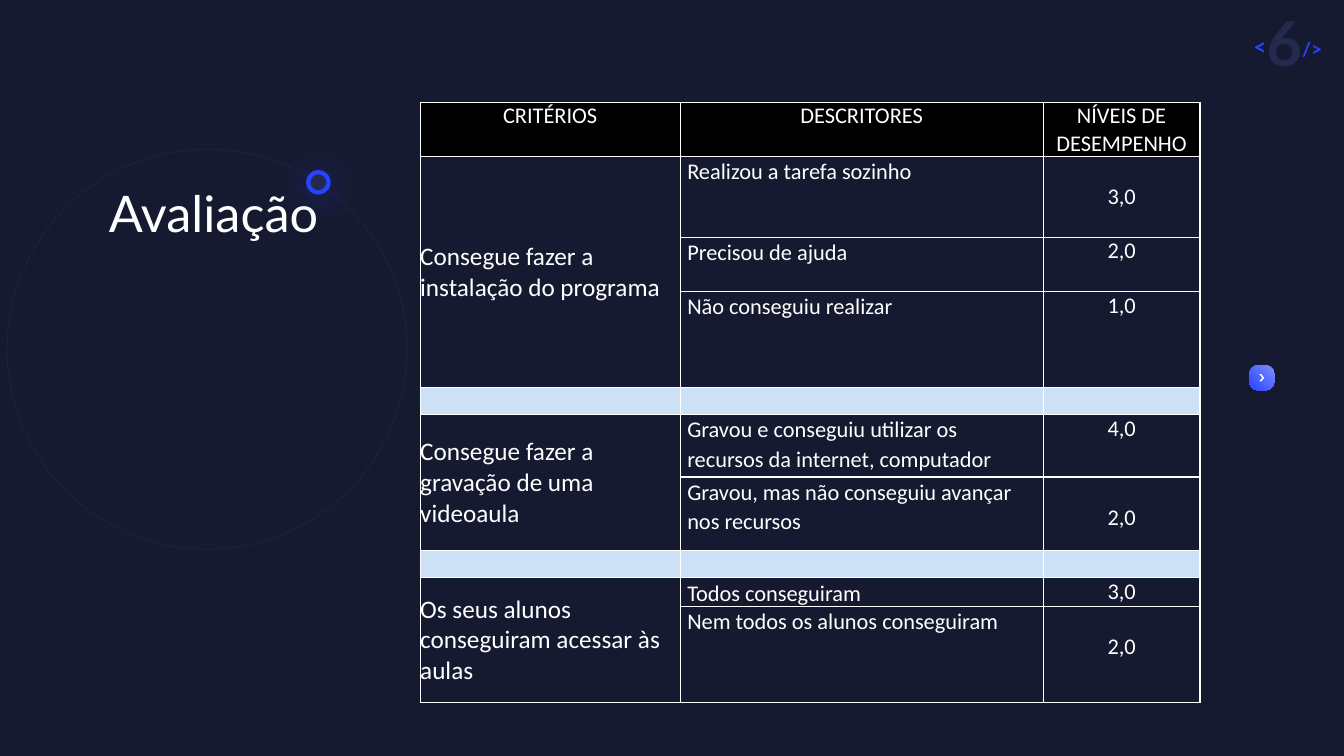
from lxml import etree
from pptx import Presentation
from pptx.dml.color import RGBColor
from pptx.enum.shapes import MSO_SHAPE as SHAPE
from pptx.enum.text import MSO_ANCHOR as ANCHOR, PP_ALIGN as ALIGN
from pptx.oxml.ns import qn
from pptx.util import Cm, Pt

NAVY = RGBColor(0x16, 0x1A, 0x30)
INDIGO = RGBColor(0x23, 0x2A, 0x4E)
BLUE = RGBColor(0x28, 0x43, 0xFF)
LILAC = RGBColor(0x7E, 0x8E, 0xFF)
PALE = RGBColor(0xCC, 0xE1, 0xF6)
WHITE = RGBColor(0xFF, 0xFF, 0xFF)
BLACK = RGBColor(0, 0, 0)

TITLE = "Avaliação"
PAGE_TAG = [("<", 28, BLUE, 30), ("6", 44, INDIGO, 0), ("/>", 24, BLUE, 30)]
HEADERS = ["CRITÉRIOS", "DESCRITORES", "NÍVEIS DE DESEMPENHO"]
# Criterion, then (descriptor, level, lines the level is lowered by)
CRITERIA = [
    ("Consegue fazer a instalação do programa", [
        ("Realizou a tarefa sozinho", "3,0", 1),
        ("Precisou de ajuda", "2,0", 0),
        ("Não conseguiu realizar", "1,0", 0)]),
    ("Consegue fazer a gravação de uma videoaula", [
        ("Gravou e conseguiu utilizar os recursos da internet, computador", "4,0", 0),
        ("Gravou, mas não conseguiu avançar nos recursos", "2,0", 1)]),
    ("Os seus alunos conseguiram acessar às aulas", [
        ("Todos conseguiram", "3,0", 0),
        ("Nem todos os alunos conseguiram", "2,0", 1)]),
]
COL_WIDTHS = [6.55, 9.15, 3.95]
ROW_HEIGHTS = [1.36, 2.04, 1.37, 2.42, 0.68, 1.57, 1.86, 0.68, 0.72, 2.42]
LINE = 0.68


def add_color(parent, color, opacity=100):
    clr = etree.SubElement(parent, qn("a:srgbClr"), val=str(color))
    etree.SubElement(clr, qn("a:alpha"), val=str(opacity * 1000))


def add_plain_shape(kind, x, y, w, h):
    """Add a shape without shadow, fill or line."""
    s = slide.shapes.add_shape(kind, Cm(x), Cm(y), Cm(w), Cm(h))
    s.shadow.inherit = False
    s.fill.background()
    s.line.fill.background()
    return s


def add_shadow(s, color, opacity, blur, dist, angle):
    effects = s._element.spPr.find(qn("a:effectLst"))
    shadow = etree.SubElement(
        effects, qn("a:outerShdw"), blurRad=str(Pt(blur)), dist=str(Pt(dist)),
        dir=str(angle * 60000), algn="ctr", rotWithShape="0")
    add_color(shadow, color, opacity)


def style_cell(cell, fill=None):
    """Clear the margins, set the fill and draw a white border all round."""
    cell.margin_left = cell.margin_right = cell.margin_top = cell.margin_bottom = 0
    if fill is None:
        cell.fill.background()
    else:
        cell.fill.solid()
        cell.fill.fore_color.rgb = fill
    tc_pr = cell._tc.get_or_add_tcPr()
    for i, side in enumerate("LRTB"):
        ln = etree.Element(qn(f"a:ln{side}"), w=str(Pt(1)))
        add_color(etree.SubElement(ln, qn("a:solidFill")), WHITE)
        tc_pr.insert(i, ln)


def write(cell, text, size=16, align=ALIGN.LEFT):
    p = cell.text_frame.paragraphs[0]
    p.text = text
    p.alignment = align
    p.font.name, p.font.size, p.font.color.rgb = "Calibri", Pt(size), WHITE
    return p


prs = Presentation()
prs.slide_width, prs.slide_height = Cm(33.87), Cm(19.05)
slide = prs.slides.add_slide(prs.slide_layouts[5])
slide.background.fill.solid()
slide.background.fill.fore_color.rgb = NAVY

# Page tag
tf = slide.shapes.add_textbox(Cm(27.1), 0, Cm(6.48), Cm(2.13)).text_frame
tf.word_wrap = True
tf.vertical_anchor = ANCHOR.MIDDLE
p = tf.paragraphs[0]
p.alignment = ALIGN.RIGHT
p.font.name, p.font.bold = "Lato", True
for text, size, color, raised in PAGE_TAG:
    r = p.add_run()
    r.text = text
    r.font.name, r.font.bold = "Lato", True
    r.font.size, r.font.color.rgb = Pt(size), color
    r.font._element.set("baseline", str(raised * 1000))

# Orbit and its dot
orbit = add_plain_shape(SHAPE.OVAL, 0.18, 3.76, 10.08, 10.08)
orbit.line.color.rgb, orbit.line.width = INDIGO, Pt(0.5)
orbit_color = orbit.line._ln.find(qn("a:solidFill"))[0]
etree.SubElement(orbit_color, qn("a:alpha"), val="60000")
dot = add_plain_shape(SHAPE.OVAL, 7.77, 4.34, 0.51, 0.51)
dot.fill.solid()
dot.fill.fore_color.rgb = INDIGO
dot.line.color.rgb, dot.line.width = BLUE, Pt(3)
add_shadow(dot, BLUE, 40, 24, 3, 90)

# Title
title = slide.shapes.title
title.left, title.top, title.width, title.height = Cm(2.49), Cm(4.45), Cm(9), Cm(1.8)
title.text_frame.text = TITLE
title.text_frame.vertical_anchor = ANCHOR.TOP
p = title.text_frame.paragraphs[0]
p.alignment = ALIGN.LEFT
p.font.name, p.font.size, p.font.color.rgb = "Lato", Pt(36), WHITE

# Next button
button = add_plain_shape(SHAPE.ROUNDED_RECTANGLE, 31.48, 9.2, 0.64, 0.64)
button.adjustments[0] = 0.36
button.fill.gradient()
button.fill.gradient_angle = 225
for stop, color in zip(button.fill.gradient_stops, (LILAC, BLUE)):
    stop.color.rgb = color
add_shadow(button, BLACK, 6, 33, 24, 53)
chevron = add_plain_shape(SHAPE.CHEVRON, 31.74, 9.43, 0.12, 0.18)
chevron.adjustments[0] = 0.6
chevron.fill.solid()
chevron.fill.fore_color.rgb = WHITE

# Assessment table
frame = slide.shapes.add_table(
    len(ROW_HEIGHTS), len(COL_WIDTHS), Cm(10.59), Cm(2.58),
    Cm(sum(COL_WIDTHS)), Cm(sum(ROW_HEIGHTS)))
table = frame.table
table.first_row = table.horz_banding = False
for col, width in zip(table.columns, COL_WIDTHS):
    col.width = Cm(width)
for row, height in zip(table.rows, ROW_HEIGHTS):
    row.height = Cm(height)

for c, header in enumerate(HEADERS):
    style_cell(table.cell(0, c), BLACK)
    write(table.cell(0, c), header, align=ALIGN.CENTER)

top = 1
for criterion, levels in CRITERIA:
    if top > 1:
        for cell in table.rows[top].cells:
            style_cell(cell, PALE)
            cell.text_frame.paragraphs[0].font.size = Pt(10)
        top += 1
    for i, (descriptor, level, lowered) in enumerate(levels, top):
        name_cell, text_cell, level_cell = table.rows[i].cells
        for cell in (name_cell, text_cell, level_cell):
            style_cell(cell)
        text_cell.margin_left = text_cell.margin_right = Cm(0.18)
        p = write(text_cell, descriptor)
        p.line_spacing = 1.07
        p.space_before = p.space_after = Pt(6)
        level_cell.margin_top = Cm(LINE * lowered)
        write(level_cell, level, align=ALIGN.CENTER)
    first = table.cell(top, 0)
    first.merge(table.cell(top + len(levels) - 1, 0))
    first.vertical_anchor = ANCHOR.MIDDLE
    write(first, criterion, 18)
    top += len(levels)

prs.save("out.pptx")
